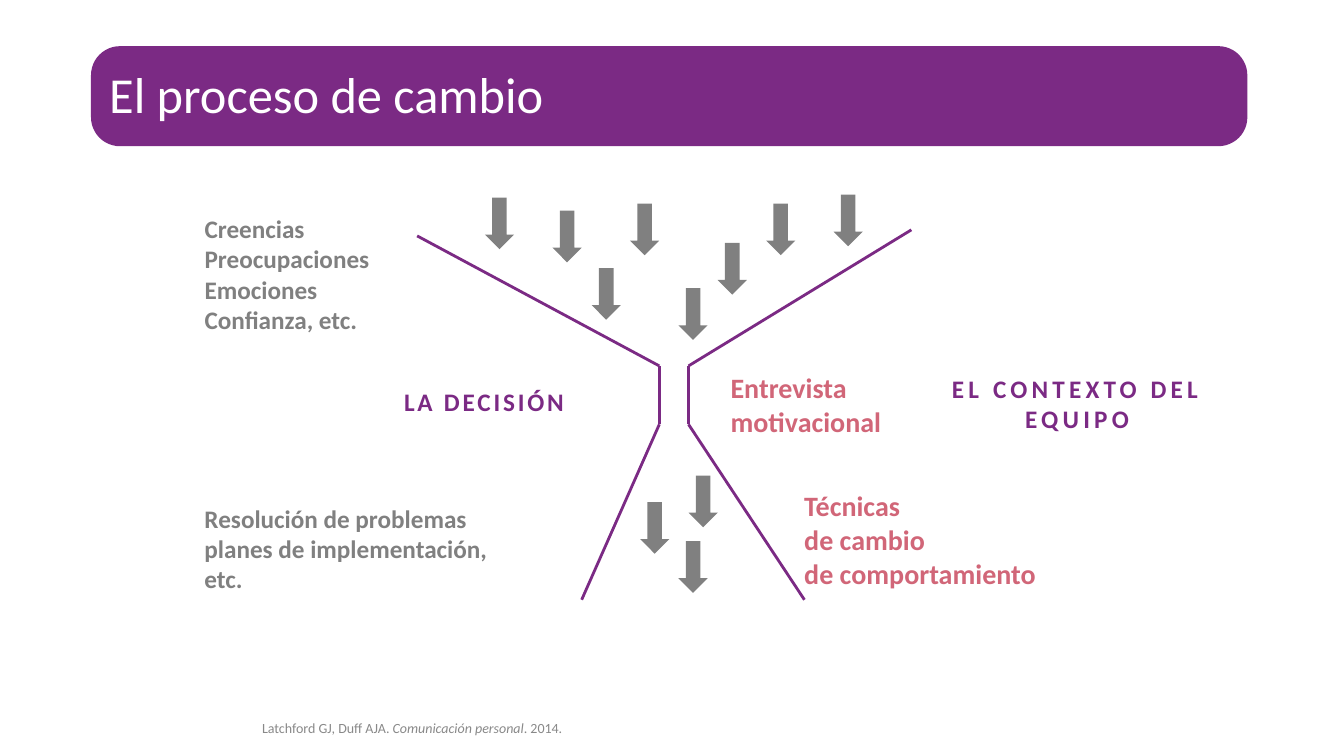
from dataclasses import dataclass
from itertools import pairwise

from lxml import etree
from pptx import Presentation
from pptx.dml.color import RGBColor
from pptx.enum.shapes import MSO_CONNECTOR as Connector, MSO_SHAPE as Shape
from pptx.enum.text import MSO_ANCHOR as Anchor, MSO_AUTO_SIZE as AutoSize, PP_ALIGN as Align
from pptx.oxml.ns import qn
from pptx.util import Pt


@dataclass(frozen=True)
class Theme:
    font: str = "Calibri"
    purple: str = "7B2A84"
    pink: str = "D16678"
    gray: str = "808080"
    light_gray: str = "898989"
    white: str = "FFFFFF"
    title_size: int = 36
    technique_size: int = 20
    label_size: int = 18
    source_size: int = 10
    line_width: int = 2


THEME = Theme()


def points(*lengths):
    return [Pt(length) for length in lengths]


def write_text(shape, paragraphs, *, size, color, bold=False, align=Align.LEFT,
               anchor=Anchor.TOP, margins=(7.2, 3.6), line_spacing=1.0, tracking=0):
    """Each paragraph is a string or a list of (text, italic) pairs."""
    frame = shape.text_frame
    frame.word_wrap = True
    frame.auto_size = AutoSize.NONE
    frame.vertical_anchor = anchor
    frame.margin_left = frame.margin_right = Pt(margins[0])
    frame.margin_top = frame.margin_bottom = Pt(margins[1])
    for index, content in enumerate(paragraphs):
        paragraph = frame.add_paragraph() if index else frame.paragraphs[0]
        properties = paragraph._p.get_or_add_pPr()
        properties.set("marL", "0")
        properties.set("indent", "0")
        etree.SubElement(properties, qn("a:buNone"))
        paragraph.alignment = align
        paragraph.line_spacing = line_spacing
        paragraph.space_before = Pt(0)
        pieces = [(content, False)] if isinstance(content, str) else content
        for text, italic in pieces:
            run = paragraph.add_run()
            run.text = text
            font = run.font
            font.name, font.size = THEME.font, Pt(size)
            font.bold, font.italic = bold, italic
            font.color.rgb = RGBColor.from_string(color)
            if tracking:
                run._r.get_or_add_rPr().set("spc", str(tracking * 100))


def place(shape, left, top, width, height):
    shape.left, shape.top, shape.width, shape.height = points(left, top, width, height)


def add_filled(slide, kind, box, color):
    shape = slide.shapes.add_shape(kind, *points(*box))
    shape.shadow.inherit = False
    shape.fill.solid()
    shape.fill.fore_color.rgb = RGBColor.from_string(color)
    shape.line.fill.background()
    return shape


def add_title(slide, box):
    left, top, width, height = box
    bar = add_filled(slide, Shape.ROUNDED_RECTANGLE, box, THEME.purple)
    bar.adjustments[0] = 0.29
    slide.shapes._spTree.insert(2, bar._element)  # behind the title
    title = slide.shapes.title
    place(title, left + 13, top + 11.5, width - 21, height - 19.5)
    write_text(title, ["El proceso de cambio"], size=THEME.title_size, color=THEME.white,
               anchor=Anchor.MIDDLE, margins=(0, 0), line_spacing=0.8)


def add_source(slide, box):
    body = slide.placeholders[1]
    place(body, *box)
    citation = [("Latchford GJ, Duff AJA. ", False), ("Comunicación personal", True),
                (". 2014.", False)]
    write_text(body, [citation], size=THEME.source_size, color=THEME.light_gray,
               anchor=Anchor.BOTTOM, margins=(0, 0), line_spacing=0.9)


def add_funnel(slide, box):
    left, top, width, height = box
    neck_left, neck_right, neck_top, neck_bottom = 173, 193.8, 122.4, 164.1

    # Walls
    walls = [
        [(0, 29.5), (neck_left, neck_top), (neck_left, neck_bottom), (117.5, height)],
        [(width, 25.2), (neck_right, neck_top), (neck_right, neck_bottom), (276.6, height)],
    ]
    for wall in walls:
        for (x1, y1), (x2, y2) in pairwise(wall):
            line = slide.shapes.add_connector(
                Connector.STRAIGHT, *points(left + x1, top + y1, left + x2, top + y2))
            line.line.color.rgb = RGBColor.from_string(THEME.purple)
            line.line.width = Pt(THEME.line_width)
            etree.SubElement(line._element.spPr, qn("a:effectLst"))

    # Arrows entering and leaving the neck
    entering = [(48.3, 2.1), (96.6, 11.5), (124.6, 52.5), (152, 6.4),
                (186.6, 66.9), (249.2, 6.4), (214.6, 34.5), (297.4, 0)]
    leaving = [(159.2, 219.6), (186.6, 247.6), (193.8, 200.8)]
    for x, y in entering + leaving:
        add_filled(slide, Shape.DOWN_ARROW, (left + x, top + y, 20.9, 36.9), THEME.gray)


def add_labels(slide, box):
    left, top = box[:2]
    stage = dict(size=THEME.label_size, color=THEME.gray)
    technique = dict(size=THEME.technique_size, color=THEME.pink)
    heading = dict(size=THEME.label_size, color=THEME.purple)
    labels = [
        ((0, 10, 229, 93.6),
         ["Creencias", "Preocupaciones", "Emociones", "Confianza, etc."], stage),
        ((0, 216.7, 227.5, 72),
         ["Resolución de problemas", "planes de implementación, etc."], stage),
        ((375.8, 122.4, 144, 55.4), ["Entrevista motivacional"], technique),
        ((428.4, 206.6, 213.8, 79.2),
         ["Técnicas", "de cambio", "de comportamiento"], technique),
        ((142.5, 133.2, 173.5, 28.8), ["LA DECISIÓN"], heading | dict(tracking=2)),
        ((532.8, 123.8, 195.1, 50.4), ["EL CONTEXTO DEL EQUIPO"],
         heading | dict(tracking=3, align=Align.CENTER)),
    ]
    for (x, y, width, height), lines, style in labels:
        label = slide.shapes.add_textbox(*points(left + x, top + y, width, height))
        write_text(label, lines, bold=True, **style)


def main():
    presentation = Presentation()
    presentation.slide_width, presentation.slide_height = points(960, 540)
    slide = presentation.slides.add_slide(presentation.slide_layouts[1])
    add_title(slide, (65, 33, 826, 71.5))
    add_source(slide, (187.2, 465, 707, 61.3))
    add_funnel(slide, (298, 139, 353, 289.4))
    add_labels(slide, (139, 139, 728, 289.4))
    presentation.save("out.pptx")


if __name__ == "__main__":
    main()
